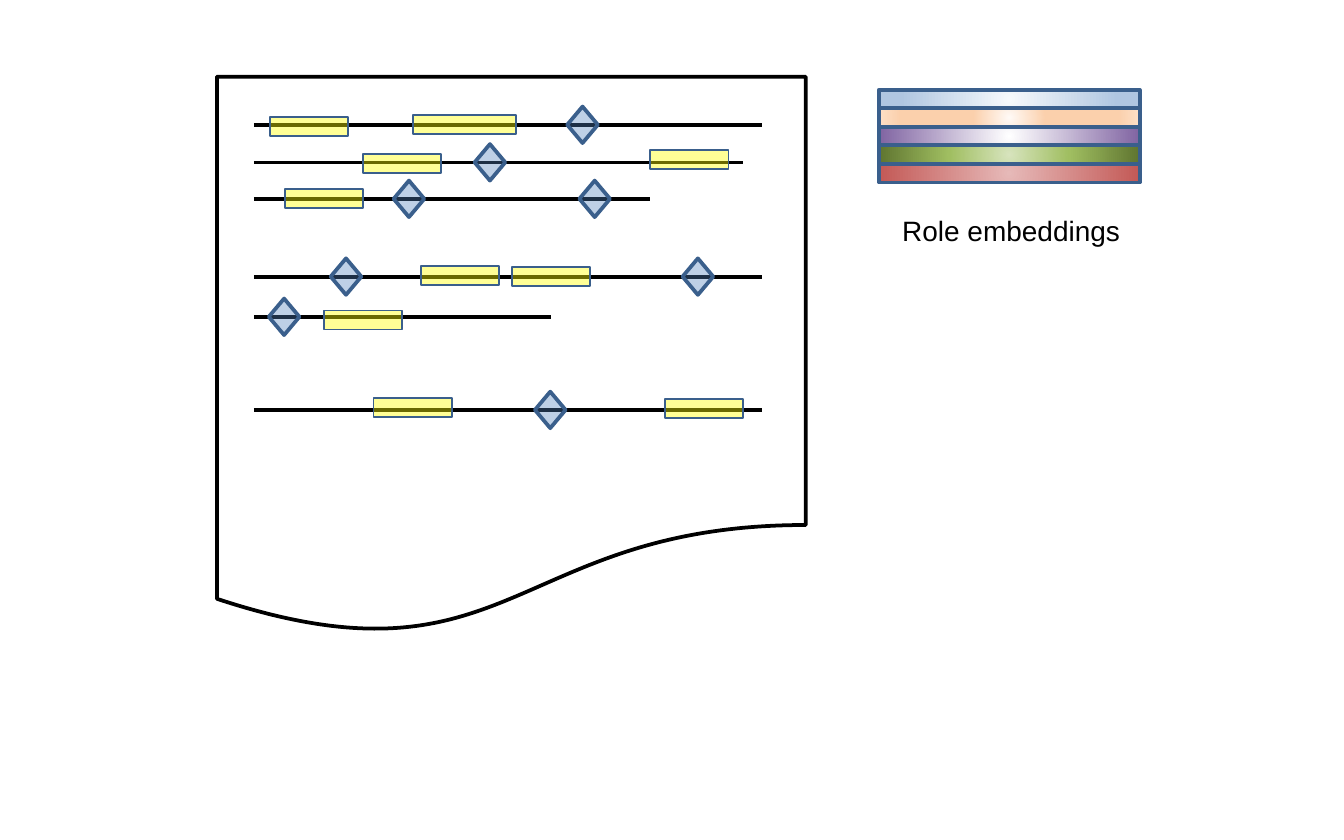
from lxml import etree
from pptx import Presentation
from pptx.dml.color import RGBColor
from pptx.enum.shapes import MSO_CONNECTOR, MSO_SHAPE
from pptx.enum.text import MSO_AUTO_SIZE, PP_ALIGN
from pptx.oxml.ns import qn
from pptx.util import Cm, Pt

STRAIGHT = MSO_CONNECTOR.STRAIGHT
DOCUMENT = MSO_SHAPE.FLOWCHART_DOCUMENT
RECTANGLE = MSO_SHAPE.RECTANGLE
DIAMOND = MSO_SHAPE.DIAMOND
CENTER = PP_ALIGN.CENTER
GROW = MSO_AUTO_SIZE.SHAPE_TO_FIT_TEXT

BLACK = RGBColor(0x00, 0x00, 0x00)
OUTLINE = RGBColor(0x3A, 0x5F, 0x8C)
YELLOW = RGBColor(0xFF, 0xFF, 0x00)
BLUE = RGBColor(0x4F, 0x81, 0xBD)
WHITE = RGBColor(0xFF, 0xFF, 0xFF)
PALE_BLUE = RGBColor(0xF6, 0xF9, 0xFC)
SKY = RGBColor(0xB0, 0xC6, 0xE1)
LIGHT_SKY = RGBColor(0xCA, 0xD9, 0xEB)
PALE_ORANGE = RGBColor(0xFF, 0xFA, 0xF6)
ORANGE = RGBColor(0xFB, 0xD0, 0xAC)
LIGHT_ORANGE = RGBColor(0xFD, 0xE0, 0xC7)
PURPLE = RGBColor(0x80, 0x64, 0xA2)
PALE_GREEN = RGBColor(0xD7, 0xE4, 0xBD)
GREEN = RGBColor(0xA0, 0xBE, 0x61)
DARK_GREEN = RGBColor(0x5F, 0x75, 0x30)
PALE_RED = RGBColor(0xE6, 0xB9, 0xB8)
RED = RGBColor(0xC3, 0x59, 0x56)
DARK_RED = RGBColor(0x77, 0x2C, 0x2A)

# Lengths in centimetres
LINE_LEFT = 4.8
MARK_WIDTH, MARK_HEIGHT = 1.48, 0.36
DIAMOND_WIDTH, DIAMOND_HEIGHT = 0.58, 0.69
BAND_LEFT, BAND_TOP, BAND_WIDTH, BAND_HEIGHT = 16.61, 1.7, 4.93, 0.35

# Text lines: height, right end, marks (left, top, width), diamond lefts
TEXT_LINES = [
    (2.36, 14.4, [(5.1, 2.21, MARK_WIDTH), (7.8, 2.18, 1.96)], [10.72]),
    (3.07, 14.05, [(6.86, 2.92, MARK_WIDTH), (12.29, 2.84, MARK_WIDTH)], [8.97]),
    (3.76, 12.29, [(5.38, 3.58, MARK_WIDTH)], [7.44, 10.95]),
    (5.23, 14.4, [(7.95, 5.03, MARK_WIDTH), (9.68, 5.05, MARK_WIDTH)], [6.25, 12.9]),
    (5.99, 10.41, [(6.12, 5.87, MARK_WIDTH)], [5.08]),
    (7.75, 14.4, [(7.06, 7.52, MARK_WIDTH), (12.57, 7.54, MARK_WIDTH)], [10.11]),
]

# Gradient stops of each band, from its centre outwards
BANDS = [
    [(0, PALE_BLUE), (83, SKY), (100, SKY), (100, LIGHT_SKY)],
    [(0, PALE_ORANGE), (28, ORANGE), (83, ORANGE), (100, LIGHT_ORANGE)],
    [(0, WHITE), (100, PURPLE)],
    [(0, PALE_GREEN), (46, GREEN), (100, DARK_GREEN)],
    [(0, PALE_RED), (100, RED), (100, DARK_RED)],
]


def add_outlined(page, kind, left, top, width, height, color, points):
    """Add an unfilled preset shape with an outline."""
    shape = page.shapes.add_shape(kind, Cm(left), Cm(top), Cm(width), Cm(height))
    shape.shadow.inherit = False
    shape.fill.background()
    shape.line.color.rgb = color
    shape.line.width = Pt(points)
    return shape


def fill_translucent(shape, color, opacity):
    shape.fill.solid()
    shape.fill.fore_color.rgb = color
    solid_color = shape._element.spPr.find(qn("a:solidFill"))[0]
    etree.SubElement(solid_color, qn("a:alpha"), val=str(opacity * 1000))


def fill_radial(shape, stops):
    properties = shape._element.spPr
    gradient = etree.Element(qn("a:gradFill"), rotWithShape="1")
    stop_list = etree.SubElement(gradient, qn("a:gsLst"))
    for position, color in stops:
        stop = etree.SubElement(stop_list, qn("a:gs"), pos=str(position * 1000))
        etree.SubElement(stop, qn("a:srgbClr"), val=str(color))
    shade = etree.SubElement(gradient, qn("a:path"), {"path": "circle"})
    center = dict.fromkeys("ltrb", "50000")
    etree.SubElement(shade, qn("a:fillToRect"), center)
    properties.replace(properties.find(qn("a:noFill")), gradient)


def add_line(page, height, right):
    line = page.shapes.add_connector(
        STRAIGHT, Cm(LINE_LEFT), Cm(height), Cm(right), Cm(height))
    line.line.color.rgb = BLACK
    line.line.width = Pt(2)
    etree.SubElement(line._element.spPr, qn("a:effectLst"))


def add_text_line(page, height, right, marks, diamonds):
    """Add one line of the document with its marks and diamonds."""
    add_line(page, height, right)
    for left, top, width in marks:
        mark = add_outlined(page, RECTANGLE, left, top, width, MARK_HEIGHT, OUTLINE, 1)
        fill_translucent(mark, YELLOW, 41)
    for left in diamonds:
        diamond = add_outlined(page, DIAMOND, left, height - DIAMOND_HEIGHT / 2,
                               DIAMOND_WIDTH, DIAMOND_HEIGHT, OUTLINE, 2)
        fill_translucent(diamond, BLUE, 37)


def add_label(page, text, left, top, width, height):
    box = page.shapes.add_textbox(Cm(left), Cm(top), Cm(width), Cm(height))
    frame = box.text_frame
    for name, value in {"word_wrap": False, "auto_size": GROW}.items():
        setattr(frame, name, value)
    para = frame.paragraphs[0]
    para.alignment = CENTER
    span = para.add_run()
    span.text = text
    for name, value in {"name": "Arial", "size": Pt(15)}.items():
        setattr(span.font, name, value)
    span.font.color.rgb = BLACK


def main():
    deck = Presentation()
    deck.slide_width, deck.slide_height = Cm(25.4), Cm(15.88)
    page = deck.slides.add_slide(deck.slide_layouts[6])

    # Document with annotated lines
    add_outlined(page, DOCUMENT, 4.1, 1.45, 11.13, 10.57, BLACK, 2)
    for text_line in TEXT_LINES:
        add_text_line(page, *text_line)

    # Stack of role embeddings
    for index, stops in enumerate(BANDS):
        band = add_outlined(page, RECTANGLE, BAND_LEFT, BAND_TOP + index * BAND_HEIGHT,
                            BAND_WIDTH, BAND_HEIGHT, OUTLINE, 2)
        fill_radial(band, stops)
    add_label(page, "Role embeddings", 16.76, 3.91, 4.7, 0.89)

    deck.save("out.pptx")


if __name__ == "__main__":
    main()
